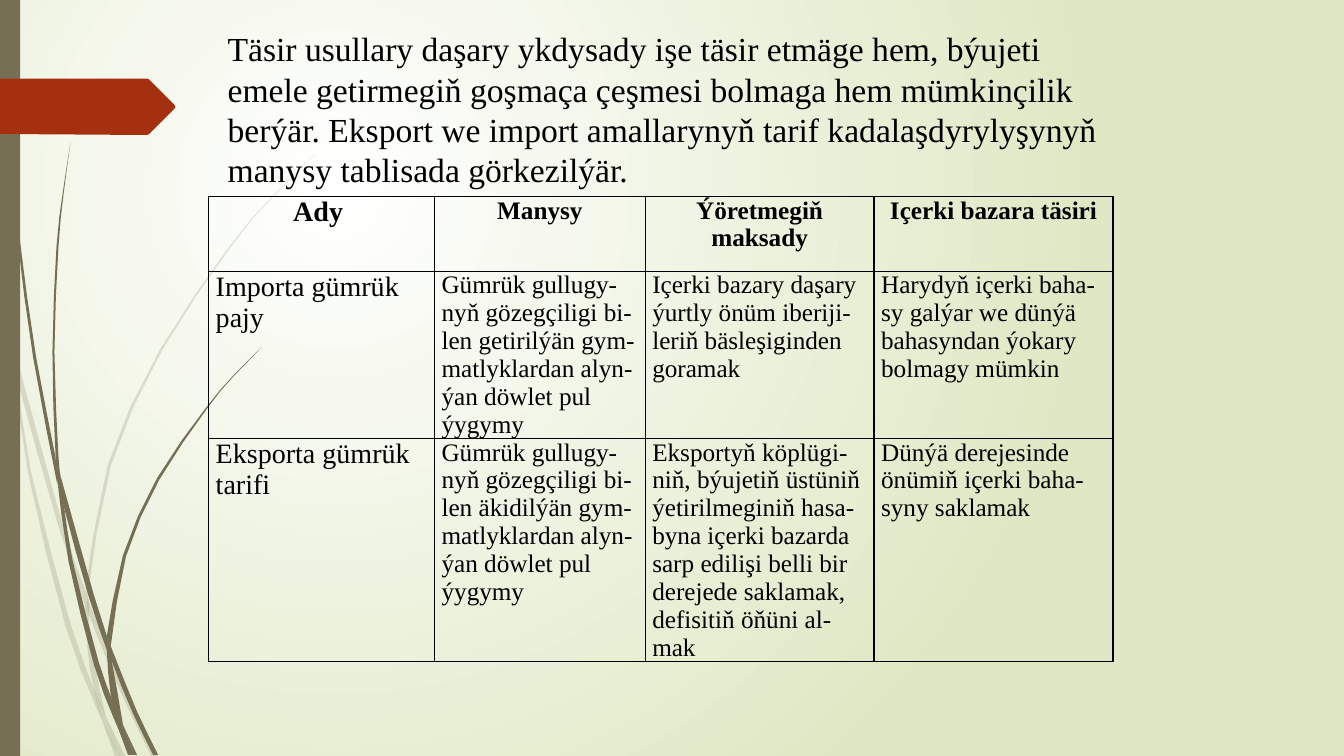
from lxml import etree
from pptx import Presentation
from pptx.dml.color import RGBColor
from pptx.enum.shapes import MSO_SHAPE
from pptx.enum.text import MSO_ANCHOR, PP_ALIGN
from pptx.oxml.ns import qn
from pptx.util import Inches, Pt

RECTANGLE = MSO_SHAPE.RECTANGLE
TOP = MSO_ANCHOR.TOP
LEFT, CENTER = PP_ALIGN.LEFT, PP_ALIGN.CENTER
OLIVE, RED, BLACK = "766F54", "A53010", "000000"
FONT = "Times New Roman"

INTRO = (
    "Täsir usullary daşary ykdysady işe täsir etmäge hem, býujeti emele "
    "getirmegiň goşmaça çeşmesi bolmaga hem mümkinçilik berýär. Eksport we "
    "import amallarynyň tarif kadalaşdyrylyşynyň manysy tablisada görkezilýär."
)
COLUMN_WIDTHS = [2.24, 2.09, 2.27, 2.37]
ROW_HEIGHTS = [0.74, 1.64, 2.18]
TARIFF_ROWS = [
    ["Ady ", "Manysy", "Ýöretmegiň maksady", "Içerki bazara täsiri"],
    [
        "Importa gümrük pajy",
        "Gümrük gullugy-nyň gözegçiligi bi-len getirilýän gym-matlyklardan "
        "alyn-ýan döwlet pul ýygymy",
        "Içerki bazary daşary ýurtly önüm iberiji-leriň bäsleşiginden goramak",
        "Harydyň içerki baha-sy galýar we dünýä bahasyndan ýokary bolmagy mümkin",
    ],
    [
        "Eksporta gümrük tarifi",
        "Gümrük gullugy-nyň gözegçiligi bi-len äkidilýän gym-matlyklardan "
        "alyn-ýan döwlet pul ýygymy",
        "Eksportyň köplügi-niň, býujetiň üstüniň ýetirilmeginiň hasa-byna "
        "içerki bazarda sarp edilişi belli bir derejede saklamak, defisitiň "
        "öňüni al-mak",
        "Dünýä derejesinde önümiň içerki baha-syny saklamak",
    ],
]

PALE_BLADES = [
    ([(0, 2.99), (0.1, 3.44), (0.11, 3.5)], [(0, 2.82), (0.09, 3.22), (0.11, 3.5)]),
    ([(0.14, 3.45), (0.17, 3.76), (0.58, 5.22), (0.84, 5.99)],
     [(0.14, 3.45), (0.62, 5.2), (0.85, 5.86)]),
    ([(0.88, 5.96), (0.88, 6.1), (1.23, 6.94), (1.5, 7.5)],
     [(0.88, 5.96), (0.92, 6.07), (1.27, 6.92), (1.55, 7.5)]),
    ([(1.05, 7.11), (1.19, 7.5)], [(1.05, 7.11), (1.24, 7.5)]),
    ([(0.11, 3.5), (0.28, 4.7), (0.65, 6.21), (0.92, 6.93), (1.01, 7.14)],
     [(0.11, 3.5), (0.17, 3.76), (0.31, 4.69), (0.7, 6.19), (0.93, 6.83), (1.01, 7.14)]),
    ([(0.84, 5.99), (0.87, 6.46), (0.93, 6.83), (1.05, 7.11)],
     [(0.84, 5.99), (0.88, 6.1), (0.91, 6.46), (1.05, 7.11)]),
    ([(3.12, 1.53), (2.68, 1.97), (2.28, 2.44), (1.58, 3.48), (1.07, 4.61), (0.85, 5.84)],
     [(3.12, 1.54), (2.68, 1.98), (2.29, 2.45), (1.6, 3.49), (1.1, 4.62), (0.88, 5.84),
      (0.88, 5.96)]),
    ([(1.01, 7.14), (1.14, 7.5)], [(1.01, 7.14), (1.19, 7.5)]),
    ([(0.85, 5.86), (0.84, 5.99), (0.88, 6.1)], [(0.85, 5.86), (0.88, 5.96), (0.88, 6.1)]),
    ([(0.93, 6.83), (1.01, 7.14), (1.19, 7.5)], [(0.93, 6.83), (1.05, 7.11), (1.19, 7.5)]),
]
DARK_BLADES = [
    ([(0.03, 0), (0.07, 1.1), (0.17, 2.33), (0.33, 3.55), (0.57, 4.81)],
     [(0.04, 0), (0.08, 1.09), (0.19, 2.32), (0.36, 3.55), (0.55, 4.53), (0.57, 4.81)]),
    ([(0.6, 4.72), (0.64, 5.05), (0.88, 5.92), (1.06, 6.45)],
     [(0.6, 4.72), (0.93, 5.9), (1.06, 6.31), (1.06, 6.45)]),
    ([(1.1, 6.41), (1.11, 6.56), (1.32, 7.08), (1.52, 7.49)],
     [(1.1, 6.41), (1.13, 6.49), (1.36, 7.06), (1.57, 7.49)]),
    ([(0.57, 4.77), (0.68, 5.57), (0.93, 6.59), (1.11, 7.08), (1.17, 7.22)],
     [(0.57, 4.77), (0.64, 5.05), (0.72, 5.56), (0.98, 6.57), (1.1, 6.91), (1.17, 7.22)]),
    ([(0.7, 1.41), (0.62, 1.93), (0.56, 2.45), (0.52, 3.49), (0.55, 4.49), (0.6, 4.72)],
     [(0.7, 1.41), (0.63, 1.93), (0.58, 2.45), (0.54, 3.49), (0.58, 4.53), (0.6, 4.72)]),
    ([(1.22, 7.19), (1.33, 7.49)], [(1.22, 7.19), (1.36, 7.49)]),
    ([(0.55, 4.49), (0.57, 4.77), (0.64, 5.05)], [(0.55, 4.49), (0.6, 4.72), (0.64, 5.05)]),
    ([(2.6, 3.44), (2.31, 3.73), (2.04, 4.05), (1.56, 4.74), (1.22, 5.51), (1.06, 6.31)],
     [(2.61, 3.44), (2.31, 3.74), (2.05, 4.06), (1.58, 4.76), (1.25, 5.52), (1.11, 6.33),
      (1.1, 6.41)]),
    ([(1.17, 7.22), (1.27, 7.49)], [(1.17, 7.22), (1.31, 7.49)]),
    ([(1.06, 6.45), (1.1, 6.91), (1.22, 7.19)], [(1.06, 6.45), (1.11, 6.56), (1.22, 7.19)]),
    ([(1.06, 6.31), (1.06, 6.45), (1.11, 6.56)], [(1.06, 6.31), (1.1, 6.41), (1.11, 6.56)]),
    ([(1.1, 6.91), (1.17, 7.22), (1.3, 7.49)], [(1.1, 6.91), (1.22, 7.19), (1.33, 7.49)]),
]
MARKER = [(0, 0.78), (1.46, 0.78), (1.48, 0.79), (1.73, 1.04), (1.74, 1.06),
          (1.73, 1.08), (1.48, 1.33), (1.46, 1.34), (0, 1.33)]


def color(value):
    return RGBColor.from_string(value)


def write(frame, text, size=18, bold=False, align=LEFT):
    frame.word_wrap = True
    paragraph = frame.paragraphs[0]
    paragraph.alignment = align
    run = paragraph.add_run()
    run.text = text
    run.font.name = FONT
    run.font.size = Pt(size)
    run.font.bold = bold
    run.font.color.rgb = color(BLACK)


def smooth(knots):
    padded = [knots[0], *knots, knots[-1]]
    points = [knots[0]]
    for before, start, end, after in zip(padded, padded[1:], padded[2:], padded[3:]):
        middle = tuple((9 * (b + c) - a - d) / 16
                       for a, b, c, d in zip(before, start, end, after))
        points += [middle, end]
    return points


class SlideBuilder:
    def __init__(self, presentation):
        self.slide = presentation.slides.add_slide(presentation.slide_layouts[6])
        self.shapes = self.slide.shapes

    def background(self, inner, outer):
        fill = self.slide.background.fill
        fill.gradient()
        for stop, value, position in zip(fill.gradient_stops, (inner, outer), (0, 1)):
            stop.color.rgb = color(value)
            stop.position = position
        gradient = next(self.slide.element.iter(qn("a:gradFill")))
        gradient.remove(gradient.find(qn("a:lin")))
        circle = etree.SubElement(gradient, qn("a:path"), path="circle")
        etree.SubElement(circle, qn("a:fillToRect"),
                         l="50000", t="50000", r="100000", b="100000")

    def paint(self, shape, fill, opacity=100):
        shape.shadow.inherit = False
        shape.fill.solid()
        shape.fill.fore_color.rgb = color(fill)
        shape.line.fill.background()
        if opacity < 100:
            tone = next(shape.element.spPr.iter(qn("a:srgbClr")))
            etree.SubElement(tone, qn("a:alpha"), val=str(opacity * 1000))

    def rectangle(self, left, top, width, height, fill):
        box = map(Inches, (left, top, width, height))
        self.paint(self.shapes.add_shape(RECTANGLE, *box), fill)

    def outline(self, points, fill, opacity=100):
        start, *others = [(Inches(x), Inches(y)) for x, y in points]
        builder = self.shapes.build_freeform(*start)
        builder.add_line_segments(others, close=True)
        self.paint(builder.convert_to_shape(), fill, opacity)

    def blade(self, left_edge, right_edge, opacity=100):
        right_side = smooth(right_edge)[:0:-1]
        self.outline(smooth(left_edge) + right_side, OLIVE, opacity)

    def text(self, left, top, width, height, text, **style):
        box = map(Inches, (left, top, width, height))
        write(self.shapes.add_textbox(*box).text_frame, text, **style)

    def border(self, cell):
        properties = cell._tc.get_or_add_tcPr()
        for side in ("a:lnL", "a:lnR", "a:lnT", "a:lnB"):
            line = etree.SubElement(properties, qn(side), w=str(Pt(1)))
            solid = etree.SubElement(line, qn("a:solidFill"))
            etree.SubElement(solid, qn("a:srgbClr"), val=BLACK)

    def table(self, left, top, widths, heights, rows):
        box = map(Inches, (left, top, sum(widths), sum(heights)))
        table = self.shapes.add_table(len(rows), len(widths), *box).table
        table.first_row = table.horz_banding = False
        for column, width in zip(table.columns, widths):
            column.width = Inches(width)
        for row_index, (height, texts) in enumerate(zip(heights, rows)):
            table.rows[row_index].height = Inches(height)
            header = row_index == 0
            for column_index, text in enumerate(texts):
                cell = table.cell(row_index, column_index)
                cell.margin_left = cell.margin_right = Inches(0.07)
                cell.margin_top = cell.margin_bottom = 0
                cell.vertical_anchor = TOP
                self.border(cell)
                cell.fill.background()
                write(cell.text_frame, text, size=18 if column_index else 20,
                      bold=header, align=CENTER if header else LEFT)


def main():
    presentation = Presentation()
    presentation.slide_width = Inches(13.33)
    presentation.slide_height = Inches(7.5)
    builder = SlideBuilder(presentation)
    builder.background("FFFFFF", "DFE8C4")
    for opacity, blades in ((20, PALE_BLADES), (100, DARK_BLADES)):
        for left_edge, right_edge in blades:
            builder.blade(left_edge, right_edge, opacity)
    builder.rectangle(0, 0, 0.2, 7.5, OLIVE)
    builder.outline(MARKER, RED)
    builder.table(2.07, 1.95, COLUMN_WIDTHS, ROW_HEIGHTS, TARIFF_ROWS)
    builder.text(2.16, 0.23, 9.04, 1.72, INTRO, size=24)
    presentation.save("out.pptx")


if __name__ == "__main__":
    main()
